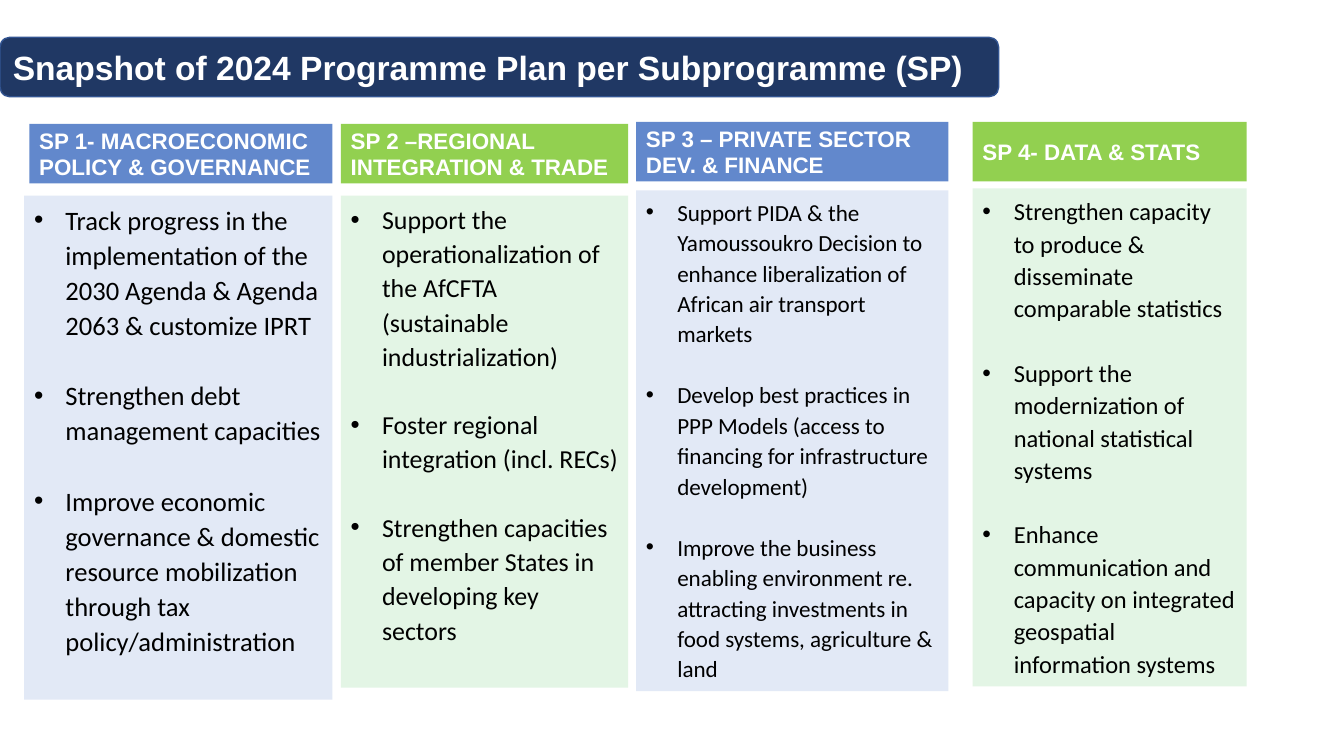
from lxml.etree import SubElement
from pptx import Presentation
from pptx.dml.color import RGBColor
from pptx.enum.shapes import MSO_SHAPE
from pptx.enum.text import MSO_ANCHOR, PP_ALIGN
from pptx.oxml.ns import qn
from pptx.util import Cm, Pt

TITLE = "Snapshot of 2024 Programme Plan per Subprogramme (SP)"

COLUMNS = [
    dict(
        header="SP 1- MACROECONOMIC POLICY & GOVERNANCE", tone="blue", size=19,
        left=0.61, width=7.77, header_inset=0.13, header_top=3.12, top=4.93, height=12.7,
        points=[
            "Track progress in the implementation of the 2030 Agenda & Agenda 2063 & customize IPRT",
            "Strengthen debt management capacities",
            "Improve economic governance & domestic resource mobilization through tax policy/administration",
        ],
    ),
    dict(
        header="SP 2 –REGIONAL INTEGRATION & TRADE", tone="green", size=18.5,
        left=8.59, width=7.24, header_inset=0, header_top=3.12, top=4.93, height=12.4,
        points=[
            "Support the operationalization of the AfCFTA (sustainable industrialization)",
            "Foster regional integration (incl. RECs)",
            "Strengthen capacities of member States in developing key sectors",
        ],
    ),
    dict(
        header="SP 3 – PRIVATE SECTOR DEV. & FINANCE", tone="blue", size=16.5,
        left=16.03, width=7.87, header_inset=0, header_top=3.07, top=4.8, height=12.62,
        points=[
            "Support PIDA & the Yamoussoukro Decision to enhance liberalization of African air transport markets",
            "Develop best practices in PPP Models (access to financing for infrastructure development)",
            "Improve the business enabling environment re. attracting investments in food systems, agriculture & land",
        ],
    ),
    dict(
        header="SP 4- DATA & STATS", tone="green", size=17.5,
        left=24.51, width=6.91, header_inset=0, header_top=3.07, top=4.75, height=12.55,
        points=[
            "Strengthen capacity to produce & disseminate comparable statistics",
            "Support the modernization of national statistical systems",
            "Enhance communication and capacity on integrated geospatial information systems",
        ],
    ),
]

THEME = dict(
    banner="203864", banner_line="325491",
    header=dict(blue="6288CC", green="92D050"),
    panel=dict(blue="E2E9F6", green="E3F5E5"),
    title_font=dict(name="Arial", size=Pt(24), bold=True, color="FFFFFF"),
    header_font=dict(name="Arial", size=Pt(16), bold=True, color="FFFFFF"),
    body_font=dict(name="Calibri", bold=False, color="000000"),
)
BAR_HEIGHT = 1.5
INDENT = Cm(0.79)
LINE_SPACING = 1.1
GAP_PER_POINT = 1.32


def style(font, fmt):
    for key, value in fmt.items():
        if key == "color":
            font.color.rgb = RGBColor.from_string(value)
        else:
            setattr(font, key, value)


def add_box(s, kind, left, top, width, height, fill, anchor, line=None):
    sp = s.shapes.add_shape(kind, Cm(left), Cm(top), Cm(width), Cm(height))
    sp.shadow.inherit = False
    sp.fill.solid()
    sp.fill.fore_color.rgb = RGBColor.from_string(fill)
    if line:
        sp.line.color.rgb = RGBColor.from_string(line)
        sp.line.width = Pt(1)
    else:
        sp.line.fill.background()
    tf = sp.text_frame
    tf.word_wrap = True
    tf.vertical_anchor = anchor
    return tf


def add_text(p, text, fmt):
    p.alignment = PP_ALIGN.LEFT
    r = p.add_run()
    r.text = text
    style(r.font, fmt)


def add_bullet(p):
    pPr = p._p.get_or_add_pPr()
    pPr.set("marL", str(INDENT))
    pPr.set("indent", str(-INDENT))
    SubElement(pPr, qn("a:buFont"), typeface="Arial")
    SubElement(pPr, qn("a:buChar"), char="•")


def add_column(s, col):
    tone, size = col["tone"], col["size"]
    tf = add_box(s, MSO_SHAPE.RECTANGLE, col["left"], col["top"], col["width"],
                 col["height"], THEME["panel"][tone], MSO_ANCHOR.TOP)
    for i, point in enumerate(col["points"]):
        p = tf.add_paragraph() if i else tf.paragraphs[0]
        add_bullet(p)
        p.line_spacing = LINE_SPACING
        if i:
            p.space_before = Pt(round(size * GAP_PER_POINT, 1))
        add_text(p, point, dict(THEME["body_font"], size=Pt(size)))
    inset = col["header_inset"]
    tf = add_box(s, MSO_SHAPE.RECTANGLE, col["left"] + inset, col["header_top"],
                 col["width"] - inset, BAR_HEIGHT, THEME["header"][tone], MSO_ANCHOR.MIDDLE)
    add_text(tf.paragraphs[0], col["header"], THEME["header_font"])


def main():
    prs = Presentation()
    prs.slide_width, prs.slide_height = Cm(33.87), Cm(19.05)
    s = prs.slides.add_slide(prs.slide_layouts[6])
    tf = add_box(s, MSO_SHAPE.ROUNDED_RECTANGLE, 0, 0.94, 25.17, BAR_HEIGHT,
                 THEME["banner"], MSO_ANCHOR.MIDDLE, THEME["banner_line"])
    add_text(tf.paragraphs[0], TITLE, THEME["title_font"])
    for col in COLUMNS:
        add_column(s, col)
    prs.save("out.pptx")


if __name__ == "__main__":
    main()
